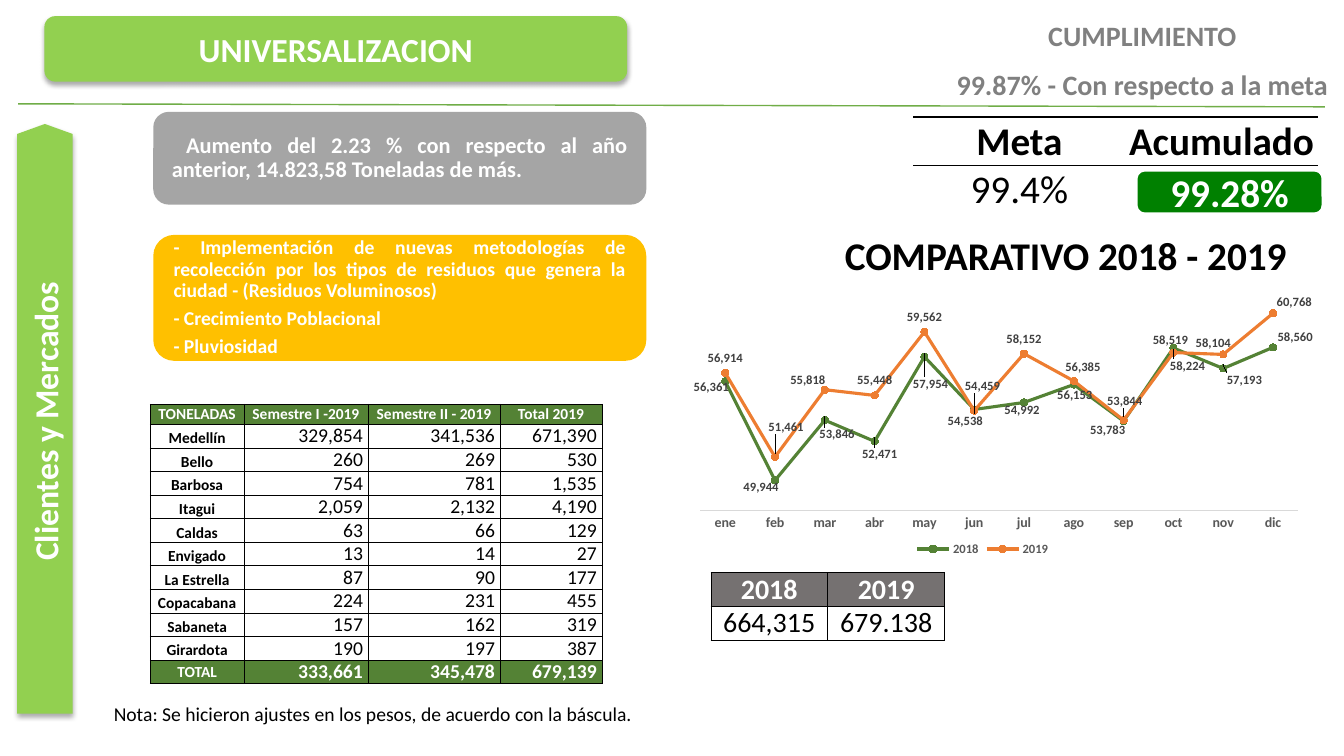
from lxml import etree
from pptx import Presentation
from pptx.chart.data import CategoryChartData
from pptx.dml.color import RGBColor
from pptx.enum.chart import (XL_CHART_TYPE, XL_LABEL_POSITION, XL_LEGEND_POSITION,
                             XL_MARKER_STYLE, XL_TICK_MARK)
from pptx.enum.shapes import MSO_CONNECTOR, MSO_SHAPE
from pptx.enum.text import MSO_ANCHOR, PP_ALIGN
from pptx.oxml import parse_xml
from pptx.oxml.ns import nsdecls, qn
from pptx.util import Inches, Pt

LEFT, CENTER, RIGHT, JUSTIFY = PP_ALIGN.LEFT, PP_ALIGN.CENTER, PP_ALIGN.RIGHT, PP_ALIGN.JUSTIFY
TOP, MIDDLE, BOTTOM = MSO_ANCHOR.TOP, MSO_ANCHOR.MIDDLE, MSO_ANCHOR.BOTTOM
ROUNDED, PENTAGON = MSO_SHAPE.ROUNDED_RECTANGLE, MSO_SHAPE.PENTAGON
ABOVE = XL_LABEL_POSITION.ABOVE
FONT = "Calibri"
WHITE, BLACK, LIME, GREEN, ORANGE = "FFFFFF", "000000", "92D050", "548235", "ED7D31"
PLAIN_TABLE = "{2D5ABB26-0587-4C30-8999-92F81FD0307C}"
NUMBER = "#,##0"

MONTHS = ["ene", "feb", "mar", "abr", "may", "jun", "jul", "ago", "sep", "oct", "nov", "dic"]
TONS_2018 = [56361, 49944, 53846, 52471, 57954, 54538, 54992, 56153, 53783, 58519, 57193, 58560]
TONS_2019 = [56914, 51461, 55818, 55448, 59562, 54459, 58152, 56385, 53844, 58224, 58104, 60768]
SHIFTS_2018 = dict(enumerate([
    (-0.14, 0.21), (-0.14, 0.22), (0.12, 0.29), (0.05, 0.28), (0.06, 0.42), (-0.09, 0.26),
    (-0.02, 0.22), (0.01, 0.25), (-0.16, 0.24), (-0.03, 0.07), (0.21, 0.26), (0.22, 0.05)]))
SHIFTS_2019 = {1: (0.11, -0.15), 2: (-0.17, 0.05), 5: (0.08, -0.1), 7: (0.09, 0.01),
               8: (0.01, -0.04), 9: (0.14, 0.28), 10: (-0.1, 0.04), 11: (0.21, 0.04)}

TONS_HEADER = ["TONELADAS", "Semestre I -2019", "Semestre II - 2019", "Total 2019"]
TONS_ROWS = [
    ["Medellín", "329,854", "341,536", "671,390"],
    ["Bello", "260", "269", "530"],
    ["Barbosa", "754", "781", "1,535"],
    ["Itagui", "2,059", "2,132", "4,190"],
    ["Caldas", "63", "66", "129"],
    ["Envigado", "13", "14", "27"],
    ["La Estrella", "87", "90", "177"],
    ["Copacabana", "224", "231", "455"],
    ["Sabaneta", "157", "162", "319"],
    ["Girardota", "190", "197", "387"],
    ["TOTAL", "333,661", "345,478", "679,139"],
]


def rgb(color):
    return RGBColor.from_string(color)


def format_font(font, size, color, bold):
    font.name, font.size, font.bold = FONT, Pt(size), bold
    font.color.rgb = rgb(color)


def write(tf, *lines, size=14, color=BLACK, bold=False, align=CENTER, anchor=TOP, wrap=True,
          margins=(0.1, 0.05, 0.1, 0.05), spacing=None, after=None, before=None, indent=None):
    tf.word_wrap = wrap
    tf.vertical_anchor = anchor
    tf.margin_left, tf.margin_top, tf.margin_right, tf.margin_bottom = map(Inches, margins)
    for i, line in enumerate(lines):
        p = tf.paragraphs[0] if i == 0 else tf.add_paragraph()
        p.alignment, p.line_spacing = align, spacing
        if after:
            p.space_after = Pt(after)
        if before and i:
            p.space_before = Pt(before)
        if indent:
            p._p.get_or_add_pPr().set("indent", str(Inches(indent)))
        r = p.add_run()
        r.text = line
        format_font(r.font, size, color, bold)


def add_text(s, box, *lines, **fmt):
    write(s.shapes.add_textbox(*map(Inches, box)).text_frame, *lines, **fmt)


def add_block(s, kind, box, fill, *lines, line=None, shadow=False, **fmt):
    sp = s.shapes.add_shape(kind, *map(Inches, box))
    sp.shadow.inherit = False
    sp.fill.solid()
    sp.fill.fore_color.rgb = rgb(fill)
    if line:
        sp.line.color.rgb = rgb(line)
        sp.line.width = Pt(1)
    else:
        sp.line.fill.background()
    if shadow:
        sp._element.spPr.find(qn("a:effectLst")).append(parse_xml(
            f'<a:outerShdw {nsdecls("a")} blurRad="{Pt(3.5)}" dist="{Pt(2.2)}" dir="5400000">'
            '<a:srgbClr val="000000"><a:alpha val="32000"/></a:srgbClr></a:outerShdw>'))
    write(sp.text_frame, *lines, **{"color": WHITE, "bold": True, "anchor": MIDDLE, **fmt})
    return sp


def add_rule(s, x1, y1, x2, y2, color):
    line = s.shapes.add_connector(MSO_CONNECTOR.STRAIGHT, *map(Inches, (x1, y1, x2, y2)))
    line.line.color.rgb = rgb(color)
    line.line.width = Pt(1)
    etree.SubElement(line._element.spPr, qn("a:effectLst"))


def add_grid(s, left, top, widths, heights):
    frame = s.shapes.add_table(len(heights), len(widths), Inches(left), Inches(top),
                               Inches(sum(widths)), Inches(sum(heights)))
    table = frame.table
    table.first_row = table.horz_banding = False
    table._tbl.tblPr.find(qn("a:tableStyleId")).text = PLAIN_TABLE
    for column, width in zip(table.columns, widths):
        column.width = Inches(width)
    for row, height in zip(table.rows, heights):
        row.height = Inches(height)
    return table


def fill_cell(cell, text, fill=None, sides="LRTB", border=0.5, margins=(0, 0, 0, 0),
              anchor=BOTTOM, **fmt):
    for side in sides:
        cell._tc.get_or_add_tcPr().append(parse_xml(
            f'<a:ln{side} {nsdecls("a")} w="{Pt(border)}"><a:solidFill>'
            f'<a:srgbClr val="{BLACK}"/></a:solidFill></a:ln{side}>'))
    if fill:
        cell.fill.solid()
        cell.fill.fore_color.rgb = rgb(fill)
    else:
        cell.fill.background()
    cell.vertical_anchor = anchor
    cell.margin_left, cell.margin_top, cell.margin_right, cell.margin_bottom = map(Inches, margins)
    if text:
        write(cell.text_frame, text, anchor=None, wrap=None, margins=(0, 0, 0, 0), **fmt)
        cell.margin_left, cell.margin_top, cell.margin_right, cell.margin_bottom = map(Inches, margins)
        cell.vertical_anchor = anchor


def add_goal_table(s):
    table = add_grid(s, 9.06, 1.16, [2.1, 1.91], [0.48, 0.47])
    pad = (0.01, 0.01, 0.01, 0)
    for c, title in enumerate(["Meta", "Acumulado"]):
        fill_cell(table.cell(0, c), title, sides="TB", border=1, margins=pad, anchor=TOP,
                  size=28, bold=True)
    for c, value in enumerate(["99.4%", ""]):
        fill_cell(table.cell(1, c), value, sides="T", border=1, margins=pad, anchor=MIDDLE, size=28)


def add_year_table(s):
    table = add_grid(s, 7.05, 5.68, [1.16] * 2, [0.33] * 2)
    for c, (year, total) in enumerate([("2018", "664,315"), ("2019", "679.138")]):
        fill_cell(table.cell(0, c), year, fill="757171", size=20, color=WHITE, bold=True)
        fill_cell(table.cell(1, c), total, size=20)


def add_tons_table(s):
    rows = [TONS_HEADER] + TONS_ROWS
    table = add_grid(s, 1.49, 4.01, [0.93, 1.23, 1.31, 1.01], [0.2] + [0.23] * len(TONS_ROWS))
    for r, row in enumerate(rows):
        edge = r in (0, len(rows) - 1)
        for c, text in enumerate(row):
            number = r > 0 and c > 0
            fill_cell(table.cell(r, c), text, fill=GREEN if edge else None,
                      anchor=MIDDLE if edge and not number else BOTTOM,
                      margins=(0, 0, 0.05 if number else 0, 0),
                      size=14 if number else 11, color=WHITE if edge else BLACK,
                      bold=edge or not number, align=RIGHT if number else CENTER)


def manual_layout(x, y, w=None, h=None):
    inner = w is not None
    parts = '<c:layoutTarget val="inner"/><c:xMode val="edge"/><c:yMode val="edge"/>' if inner else ""
    sizes = f'<c:w val="{w}"/><c:h val="{h}"/>' if inner else ""
    return parse_xml(f'<c:layout {nsdecls("c")}><c:manualLayout>{parts}<c:x val="{x}"/>'
                     f'<c:y val="{y}"/>{sizes}</c:manualLayout></c:layout>')


def style_series(series, color, shifts, width, height):
    series.smooth = False
    series.format.line.color.rgb = rgb(color)
    series.format.line.width = Pt(2.25)
    series.marker.style, series.marker.size = XL_MARKER_STYLE.CIRCLE, 5
    series.marker.format.fill.solid()
    series.marker.format.fill.fore_color.rgb = rgb(color)
    series.marker.format.line.color.rgb = rgb(color)
    labels = series.data_labels
    labels.show_value, labels.position = True, ABOVE
    labels.number_format, labels.number_format_is_linked = NUMBER, False
    format_font(labels.font, 9, "404040", True)
    for i in shifts:
        label = series.points[i].data_label
        format_font(label.font, 9, "404040", True)
        label.position = ABOVE
    for node in series._element.findall(".//" + qn("c:dLbl")):
        idx = node.find(qn("c:idx"))
        dx, dy = shifts[int(idx.get("val"))]
        idx.addnext(manual_layout(round(dx / width, 4), round(dy / height, 4)))


def add_tons_chart(s, left, top, width, height):
    data = CategoryChartData(number_format=NUMBER)
    data.categories = MONTHS
    data.add_series("2018", TONS_2018)
    data.add_series("2019", TONS_2019)
    chart = s.shapes.add_chart(XL_CHART_TYPE.LINE_MARKERS,
                               *map(Inches, (left, top, width, height)), data).chart
    format_font(chart.font, 10, BLACK, False)
    chart.has_title = False
    chart.has_legend = True
    chart.legend.position = XL_LEGEND_POSITION.BOTTOM
    chart.legend.include_in_layout = False
    format_font(chart.legend.font, 9, "595959", True)
    months, tons = chart.category_axis, chart.value_axis
    months.major_tick_mark = XL_TICK_MARK.NONE
    months.format.line.color.rgb = rgb("D9D9D9")
    months.format.line.width = Pt(0.75)
    format_font(months.tick_labels.font, 10, "595959", True)
    tons.visible = tons.has_major_gridlines = False
    tons.minimum_scale, tons.maximum_scale = 48000, 62000
    area = chart._chartSpace.chart.plotArea
    for old in area.findall(qn("c:layout")):
        area.remove(old)
    area.insert(0, manual_layout(0.07, 0.04, 0.91, 0.78))
    plot = chart.plots[0]
    plot.vary_by_categories = False
    for series, color, shifts in zip(plot.series, (GREEN, ORANGE), (SHIFTS_2018, SHIFTS_2019)):
        style_series(series, color, shifts, width, height)


def main():
    prs = Presentation()
    prs.slide_width, prs.slide_height = Inches(13.33), Inches(7.5)
    s = prs.slides.add_slide(prs.slide_layouts[6])
    add_block(s, ROUNDED, (0.44, 0.16, 5.78, 0.65), LIME, "UNIVERSALIZACION", size=24, shadow=True)
    add_rule(s, 0.18, 1.03, 13.14, 1.06, "70AD47")
    add_text(s, (8.01, 2.25, 5.12, 0.57), "COMPARATIVO 2018 - 2019", size=28, bold=True)
    banner = add_block(s, PENTAGON, (-2.48, 3.88, 5.85, 0.55), LIME, "Clientes y Mercados",
                       size=24, shadow=True)
    banner.rotation = 270
    banner.adjustments[0] = 0.18
    add_text(s, (9.37, 0.13, 3.92, 0.93), "CUMPLIMIENTO", "99.87% - Con respecto a la meta",
             size=20, color="808080", bold=True, wrap=False, before=11)
    note = {"align": JUSTIFY, "margins": (0.14, 0, 0.14, 0), "spacing": 0.9}
    add_block(s, ROUNDED, (1.52, 1.11, 4.89, 0.92), "A5A5A5",
              "Aumento del 2.23 % con respecto al año anterior, 14.823,58 Toneladas de más.",
              size=16, after=5.6, indent=0.14, **note)
    add_block(s, ROUNDED, (1.52, 2.33, 4.89, 1.25), "FFC000",
              "- Implementación de nuevas metodologías de recolección por los tipos de residuos "
              "que genera la ciudad - (Residuos Voluminosos)",
              "- Crecimiento Poblacional", "- Pluviosidad", size=14, after=4.9, **note)
    add_goal_table(s)
    add_block(s, ROUNDED, (11.29, 1.71, 1.81, 0.39), "008000", "99.28%", size=28, line="008000")
    add_text(s, (1.03, 6.91, 5.39, 0.34),
             "Nota: Se hicieron ajustes en los pesos, de acuerdo con la báscula.",
             align=LEFT, wrap=False)
    add_year_table(s)
    add_tons_table(s)
    add_tons_chart(s, 6.49, 2.81, 6.53, 2.75)
    prs.save("out.pptx")


if __name__ == "__main__":
    main()
